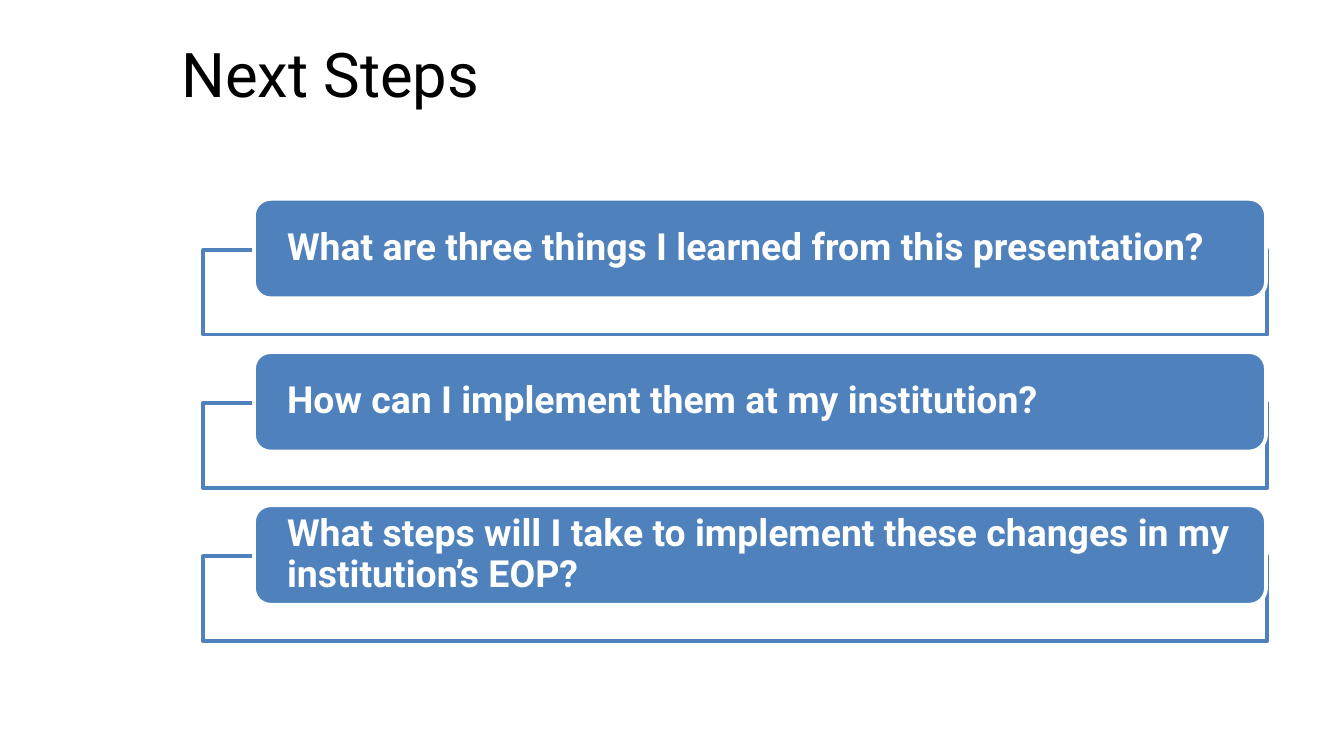
from pptx import Presentation
from pptx.dml.color import RGBColor
from pptx.enum.shapes import MSO_SHAPE
from pptx.enum.text import MSO_ANCHOR, PP_ALIGN
from pptx.util import Inches, Pt

RECTANGLE = MSO_SHAPE.RECTANGLE
ROUNDED = MSO_SHAPE.ROUNDED_RECTANGLE
MIDDLE = MSO_ANCHOR.MIDDLE
LEFT = PP_ALIGN.LEFT

FONT = "Roboto"
BLUE, WHITE, BLACK = "4F81BD", "FFFFFF", "000000"

SLIDE_WIDTH = Inches(10)
SLIDE_HEIGHT = SLIDE_WIDTH * 9 // 16

FIRST_TOP, ROW_PITCH = 1.48, 1.14
FRAME_DROP = 0.38  # the frame starts at the middle of its question bar

QUESTIONS = [
    "What are three things I learned from this presentation?",
    "How can I implement them at my institution?",
    "What steps will I take to implement these changes in my institution’s EOP?",
]


def color(hex_code):
    return RGBColor.from_string(hex_code)


def write(shape, text, size, hex_code, bold=False, margin_x=0.1, margin_y=0.05,
          spacing=1.0):
    frame = shape.text_frame
    frame.word_wrap = True
    frame.vertical_anchor = MIDDLE
    frame.margin_left = frame.margin_right = Inches(margin_x)
    frame.margin_top = frame.margin_bottom = Inches(margin_y)
    paragraph = frame.paragraphs[0]
    paragraph.alignment = LEFT
    paragraph.line_spacing = spacing
    run = paragraph.add_run()
    run.text = text
    run.font.name = FONT
    run.font.size = Pt(size)
    run.font.bold = bold
    run.font.color.rgb = color(hex_code)


def add_box(slide, kind, left, top, width, height, fill, line):
    box = slide.shapes.add_shape(
        kind, Inches(left), Inches(top), Inches(width), Inches(height))
    box.shadow.inherit = False
    box.fill.solid()
    box.fill.fore_color.rgb = color(fill)
    box.line.color.rgb = color(line)
    box.line.width = Pt(2)
    return box


def add_title(slide, text):
    title = slide.shapes.add_textbox(
        Inches(1.25), Inches(0.07), Inches(6.75), Inches(0.94))
    write(title, text, 33, BLACK)


def add_question(slide, top, text):
    """Draw an outlined frame with a question bar over its upper half."""
    add_box(slide, RECTANGLE, 1.51, top + FRAME_DROP, 7.92, 0.63, WHITE, BLUE)
    bar = add_box(slide, ROUNDED, 1.89, top, 7.53, 0.74, BLUE, WHITE)
    write(bar, text, 20, WHITE, bold=True, margin_x=0.21, margin_y=0,
          spacing=0.9)


def main():
    deck = Presentation()
    deck.slide_width, deck.slide_height = SLIDE_WIDTH, SLIDE_HEIGHT
    slide = deck.slides.add_slide(deck.slide_layouts[6])
    add_title(slide, "Next Steps")
    for row, question in enumerate(QUESTIONS):
        add_question(slide, FIRST_TOP + row * ROW_PITCH, question)
    deck.save("out.pptx")


if __name__ == "__main__":
    main()
